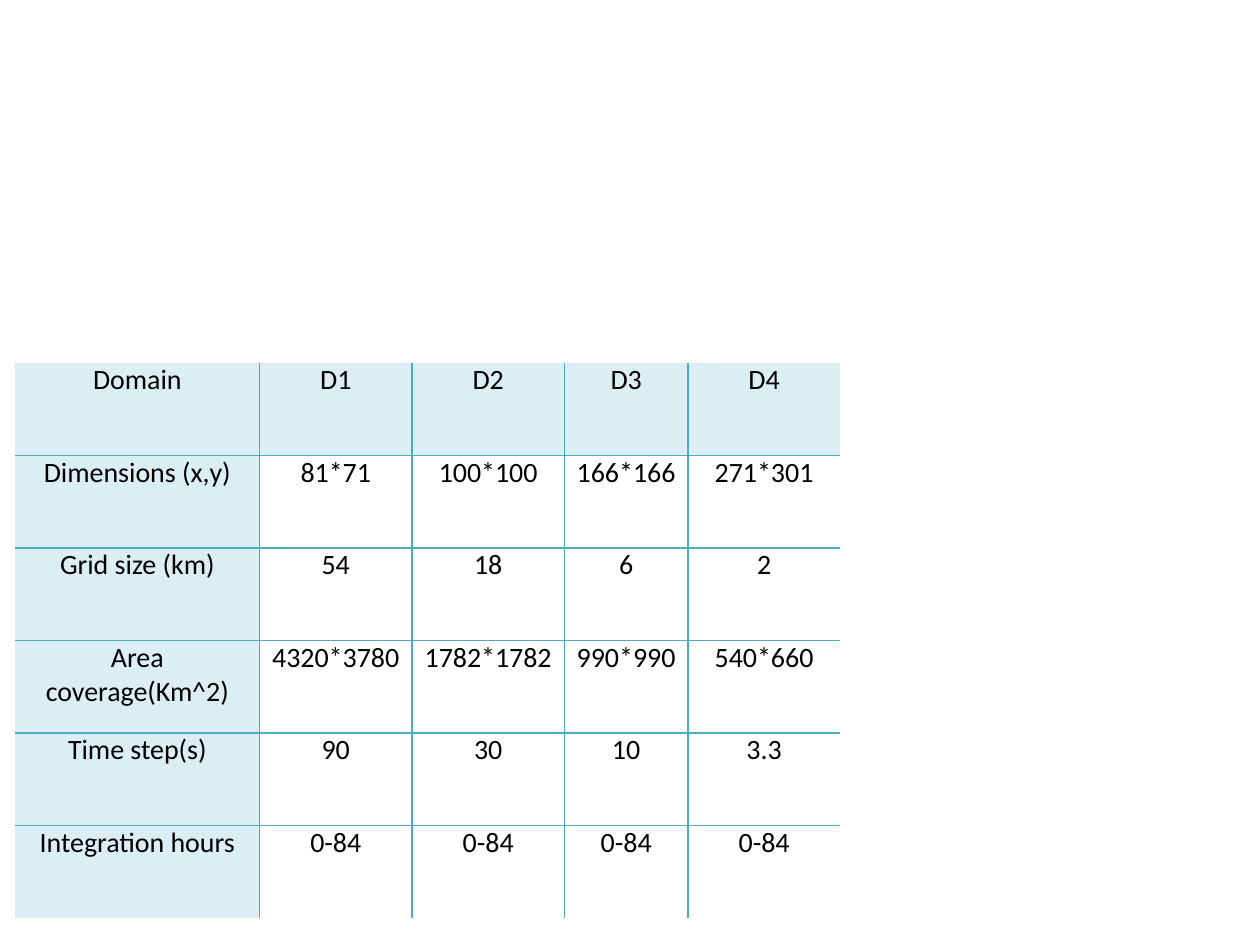
from dataclasses import dataclass

from lxml.etree import SubElement
from pptx import Presentation
from pptx.dml.color import RGBColor
from pptx.enum.text import PP_ALIGN as Align
from pptx.oxml.ns import qn
from pptx.slide import Slide
from pptx.table import _Cell as Cell
from pptx.util import Inches, Pt

BLACK = RGBColor(0x00, 0x00, 0x00)
TEAL = RGBColor(0x4B, 0xAC, 0xC6)
PALE_TEAL = RGBColor(0xDB, 0xEE, 0xF4)

FONT_NAME = "Calibri"
FONT_SIZE = Pt(16)
BORDER_WIDTH = Pt(1)
SIDE_MARGIN = Inches(0.07)


@dataclass(frozen=True)
class Grid:
    """Place and track sizes of a table, in inches."""

    left: float
    top: float
    column_widths: tuple[float, ...]
    row_height: float


DOMAIN_GRID = Grid(0.12, 2.88, (1.94, 1.21, 1.21, 0.98, 1.21), 0.735)
DOMAIN_ROWS = (
    ("Domain", "D1", "D2", "D3", "D4"),
    ("Dimensions (x,y)", "81*71", "100*100", "166*166", "271*301"),
    ("Grid size (km)", "54", "18", "6", "2"),
    ("Area coverage(Km^2)", "4320*3780", "1782*1782", "990*990", "540*660"),
    ("Time step(s)", "90", "30", "10", "3.3"),
    ("Integration hours", "0-84", "0-84", "0-84", "0-84"),
)


def draw_borders(cell: Cell, sides: dict[str, bool]) -> None:
    """Draw the inner sides of a cell and clear its outer ones."""
    properties = cell._tc.get_or_add_tcPr()
    for side, visible in sides.items():
        line = SubElement(properties, qn(f"a:ln{side}"), w=str(BORDER_WIDTH))
        if visible:
            fill = SubElement(line, qn("a:solidFill"))
            SubElement(fill, qn("a:srgbClr"), val=str(TEAL))
        else:
            SubElement(line, qn("a:noFill"))


def write_cell(cell: Cell, text: str, is_heading: bool) -> None:
    """Fill a cell and set its centred text."""
    if is_heading:
        cell.fill.solid()
        cell.fill.fore_color.rgb = PALE_TEAL
    else:
        cell.fill.background()
    cell.margin_left = cell.margin_right = SIDE_MARGIN
    cell.margin_top = cell.margin_bottom = 0
    cell.text_frame.text = text
    paragraph = cell.text_frame.paragraphs[0]
    paragraph.alignment = Align.CENTER
    font = paragraph.runs[0].font
    font.name, font.size, font.bold = FONT_NAME, FONT_SIZE, False
    font.color.rgb = BLACK


def draw_table(slide: Slide, grid: Grid, rows: tuple[tuple[str, ...], ...]) -> None:
    """Draw a table with heading cells along its top and left."""
    last_row, last_column = len(rows) - 1, len(grid.column_widths) - 1
    table = slide.shapes.add_table(
        len(rows),
        len(grid.column_widths),
        Inches(grid.left),
        Inches(grid.top),
        Inches(sum(grid.column_widths)),
        Inches(grid.row_height * len(rows)),
    ).table
    table.first_row = table.horz_banding = False
    for column, width in zip(table.columns, grid.column_widths):
        column.width = Inches(width)
    for row_index, texts in enumerate(rows):
        table.rows[row_index].height = Inches(grid.row_height)
        for column_index, text in enumerate(texts):
            cell = table.cell(row_index, column_index)
            sides = {
                "L": column_index > 0,
                "R": column_index < last_column,
                "T": row_index > 0,
                "B": row_index < last_row,
            }
            draw_borders(cell, sides)
            write_cell(cell, text, row_index == 0 or column_index == 0)


def main() -> None:
    """Build and save the slide."""
    presentation = Presentation()
    presentation.slide_width = Inches(10)
    presentation.slide_height = Inches(7.5)
    slide = presentation.slides.add_slide(presentation.slide_layouts[6])
    draw_table(slide, DOMAIN_GRID, DOMAIN_ROWS)
    presentation.save("out.pptx")


if __name__ == "__main__":
    main()
